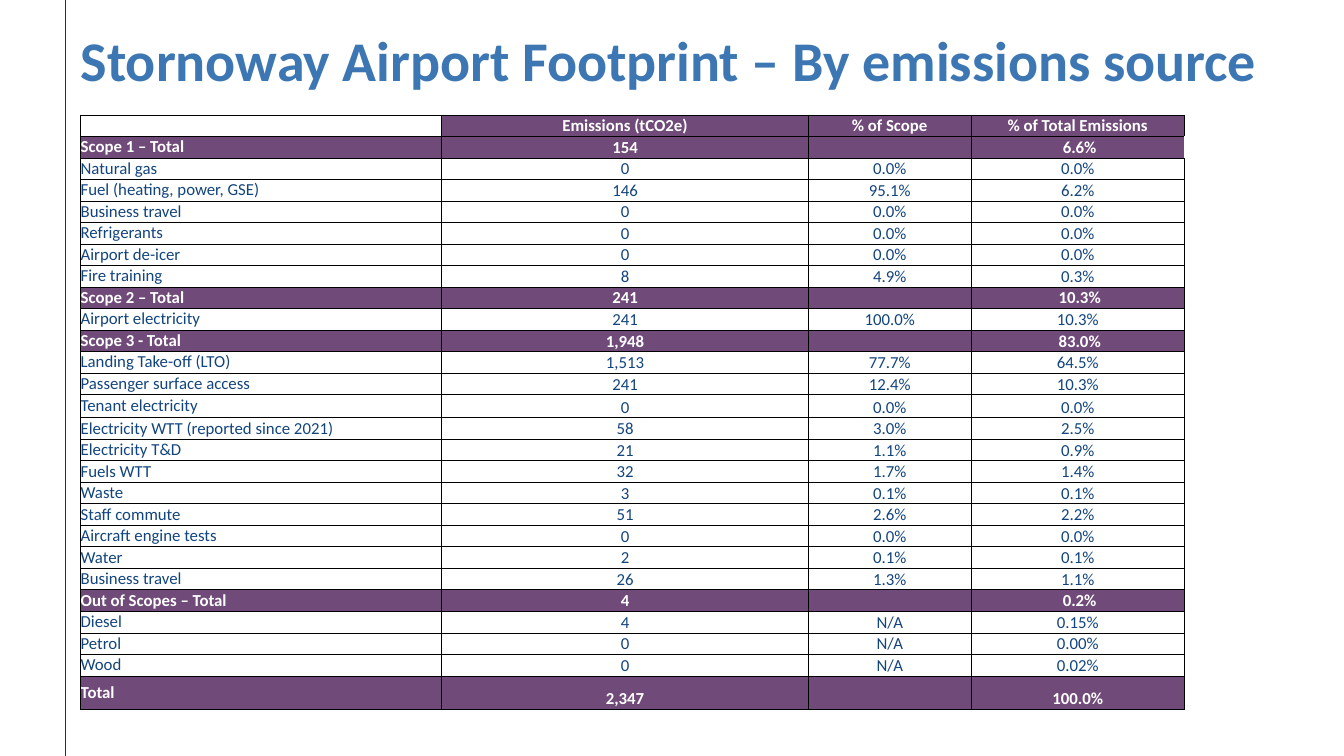
from lxml import etree
from pptx import Presentation
from pptx.dml.color import RGBColor
from pptx.enum.shapes import MSO_CONNECTOR
from pptx.enum.text import MSO_ANCHOR, PP_ALIGN
from pptx.oxml.ns import qn
from pptx.util import Inches, Pt

LEFT, CENTER = PP_ALIGN.LEFT, PP_ALIGN.CENTER
MIDDLE, BOTTOM = MSO_ANCHOR.MIDDLE, MSO_ANCHOR.BOTTOM
STRAIGHT = MSO_CONNECTOR.STRAIGHT

COLORS = {"title": "3C77B3", "rule": "023671", "band": "704A79",
          "body": "12447D", "white": "FFFFFF", "grid": "000000"}
FONT = "Calibri"
TITLE = "Stornoway Airport Footprint – By emissions source"
HEAD = ("", "Emissions (tCO2e)", "% of Scope", "% of Total Emissions")
ROWS = [
    HEAD,
    ("Scope 1 – Total", "154", "", " 6.6%"),
    ("Natural gas", "0", "0.0%", "0.0%"),
    ("Fuel (heating, power, GSE)", "146", "95.1%", "6.2%"),
    ("Business travel", "0", "0.0%", "0.0%"),
    ("Refrigerants", "0", "0.0%", "0.0%"),
    ("Airport de-icer", "0", "0.0%", "0.0%"),
    ("Fire training", "8", "4.9%", "0.3%"),
    ("Scope 2 – Total", "241", "", " 10.3%"),
    ("Airport electricity", "241", "100.0%", "10.3%"),
    ("Scope 3 - Total", "1,948", "", " 83.0%"),
    ("Landing Take-off (LTO)", "1,513", "77.7%", "64.5%"),
    ("Passenger surface access", "241", "12.4%", "10.3%"),
    ("Tenant electricity", "0", "0.0%", "0.0%"),
    ("Electricity WTT (reported since 2021)", "58", "3.0%", "2.5%"),
    ("Electricity T&D", "21", "1.1%", "0.9%"),
    ("Fuels WTT", "32", "1.7%", "1.4%"),
    ("Waste", "3", "0.1%", "0.1%"),
    ("Staff commute", "51", "2.6%", "2.2%"),
    ("Aircraft engine tests", "0", "0.0%", "0.0%"),
    ("Water", "2", "0.1%", "0.1%"),
    ("Business travel", "26", "1.3%", "1.1%"),
    ("Out of Scopes – Total", "4", "", " 0.2%"),
    ("Diesel", "4", "N/A", "0.15%"),
    ("Petrol", "0", "N/A", "0.00%"),
    ("Wood", "0", "N/A", "0.02%"),
    ("Total", "2,347", "", "100.0%"),
]
WIDTHS = (3.58, 3.64, 1.61, 2.12)
TABLE_H = 5.9
TALL = {"Tenant electricity": 0.23, "Total": 0.33}
ROW_H = (TABLE_H - sum(TALL.values())) / (len(ROWS) - len(TALL))


def put_text(frame, text, size=12, color="body", bold=False, align=LEFT,
             spacing=None):
    frame.word_wrap = True
    para = frame.paragraphs[0]
    para.alignment = align
    para.line_spacing = spacing
    if not text:
        # An empty cell needs its size set, or it stretches the row
        etree.SubElement(para._p, qn("a:endParaRPr"), sz=str(size * 100))
        return
    run = para.add_run()
    run.text = text
    font = run.font
    font.name, font.size, font.bold = FONT, Pt(size), bold
    font.color.rgb = RGBColor.from_string(COLORS[color])


def clear_pad(box):
    box.margin_left = box.margin_right = 0
    box.margin_top = box.margin_bottom = 0


def add_edges(cell, sides):
    """Draw thin lines on the given sides, a string of letters from LRTB."""
    props = cell._tc.get_or_add_tcPr()
    for side in sides:
        line = etree.SubElement(props, qn(f"a:ln{side}"), w=str(Pt(0.5)))
        fill = etree.SubElement(line, qn("a:solidFill"))
        etree.SubElement(fill, qn("a:srgbClr"), val=COLORS["grid"])


def add_rule(slide):
    rule = slide.shapes.add_connector(STRAIGHT, Inches(0.65), 0,
                                      Inches(0.65), Inches(7.5))
    rule.line.color.rgb = RGBColor.from_string(COLORS["rule"])
    rule.line.width = Pt(1)
    etree.SubElement(rule._element.spPr, qn("a:effectLst"))


def add_title(slide):
    box = slide.shapes.add_textbox(Inches(0.8), Inches(0.33),
                                   Inches(11.99), Inches(1.06))
    clear_pad(box.text_frame)
    put_text(box.text_frame, TITLE, size=40, color="title", bold=True,
             spacing=0.9)


def add_grid(slide):
    table = slide.shapes.add_table(
        len(ROWS), len(WIDTHS), Inches(0.8), Inches(1.14),
        Inches(sum(WIDTHS)), Inches(TABLE_H)).table
    table.first_row = table.horz_banding = False
    for col, width in zip(table.columns, WIDTHS):
        col.width = Inches(width)
    for r, row in enumerate(ROWS):
        table.rows[r].height = Inches(TALL.get(row[0], ROW_H))
        head = row is HEAD
        band = head or row[0].endswith("Total")
        for c, text in enumerate(row):
            cell = table.cell(r, c)
            clear_pad(cell)
            cell.vertical_anchor = MIDDLE if head or c == 0 else BOTTOM
            put_text(cell.text_frame, text, bold=band,
                     color="white" if band else "body",
                     align=CENTER if c else LEFT)
            open_end = r == 1 and c == len(row) - 1
            add_edges(cell, "LTB" if open_end else "LRTB")
            if band and (r or c):
                cell.fill.solid()
                cell.fill.fore_color.rgb = RGBColor.from_string(COLORS["band"])
            else:
                cell.fill.background()


def main():
    deck = Presentation()
    deck.slide_width, deck.slide_height = Inches(13.33), Inches(7.5)
    slide = deck.slides.add_slide(deck.slide_layouts[6])
    add_rule(slide)
    add_title(slide)
    add_grid(slide)
    deck.save("out.pptx")


if __name__ == "__main__":
    main()
